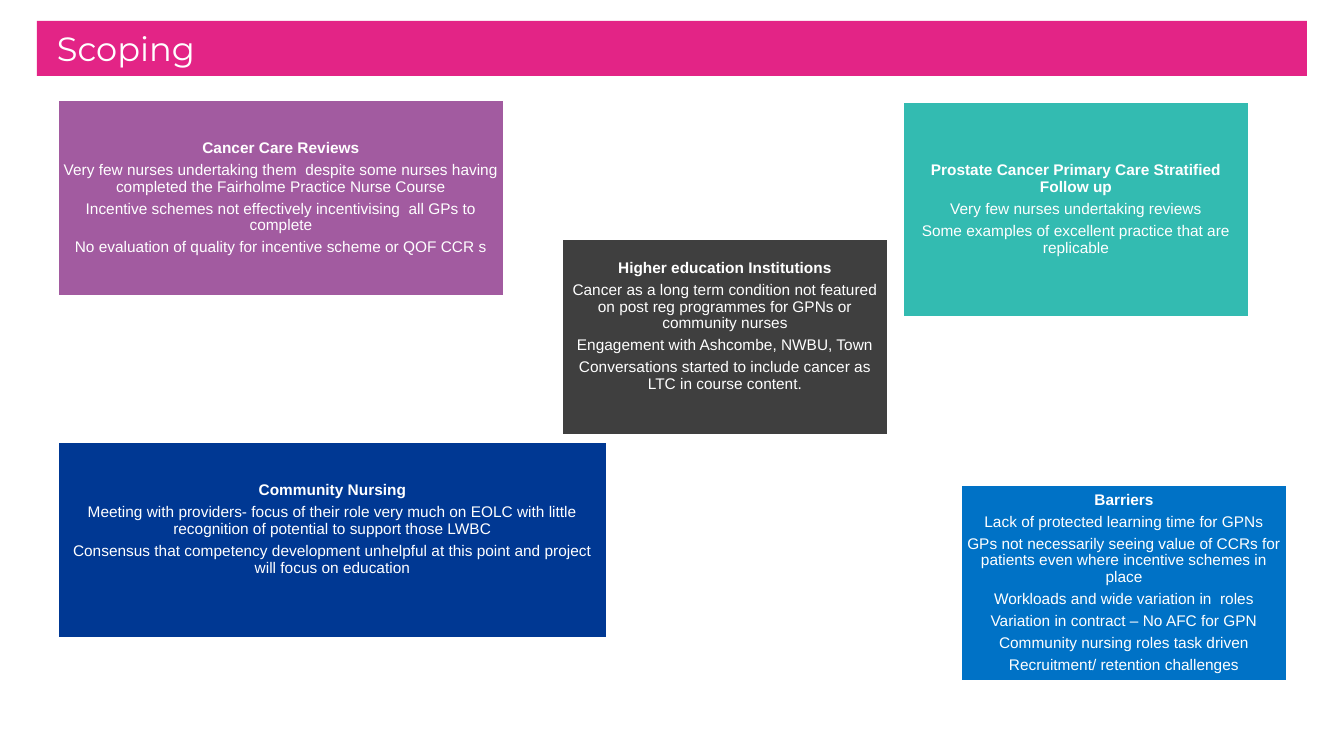
from pptx import Presentation
from pptx.dml.color import RGBColor
from pptx.enum.shapes import MSO_SHAPE as Shape
from pptx.enum.text import MSO_ANCHOR as Anchor, PP_ALIGN as Align
from pptx.util import Pt

PX = 914400 / 100.8
WIDTH, HEIGHT = 1344, 756

WHITE = RGBColor(0xFF, 0xFF, 0xFF)
PINK = RGBColor(0xE3, 0x24, 0x86)
PURPLE = RGBColor(0xA2, 0x5B, 0xA0)
TEAL = RGBColor(0x33, 0xBB, 0xB1)
NAVY = RGBColor(0x00, 0x38, 0x93)
CHARCOAL = RGBColor(0x3F, 0x3F, 0x3F)
BLUE = RGBColor(0x00, 0x72, 0xC6)

TITLE = "Scoping"
TITLE_BOX = (37, 21, 1270, 55)
INSET = 5
RAISED = 26  # bottom inset that lifts the text above the middle

# box (left, top, width, height), fill, bottom inset, heading, points
CARDS = [
    ((58, 100, 446, 196), PURPLE, INSET, "Cancer Care Reviews", [
        "Very few nurses undertaking them  despite some nurses having "
        "completed the Fairholme Practice Nurse Course",
        "Incentive schemes not effectively incentivising  all GPs to complete",
        "No evaluation of quality for incentive scheme or QOF CCR s",
    ]),
    ((903, 102, 346, 215), TEAL, INSET,
     "Prostate Cancer Primary Care Stratified Follow up", [
        "Very few nurses undertaking reviews",
        "Some examples of excellent practice that are replicable",
    ]),
    ((58, 442, 549, 196), NAVY, RAISED, "Community Nursing", [
        "Meeting with providers- focus of their role very much on EOLC with "
        "little recognition of potential to support those LWBC",
        "Consensus that competency development unhelpful at this point and "
        "project will focus on education",
    ]),
    ((562, 239, 326, 196), CHARCOAL, RAISED, "Higher education Institutions", [
        "Cancer as a long term condition not featured on post reg programmes "
        "for GPNs or community nurses",
        "Engagement with Ashcombe, NWBU, Town",
        "Conversations started to include cancer as LTC in course content.",
    ]),
    ((961, 485, 326, 196), BLUE, INSET, "Barriers", [
        "Lack of protected learning time for GPNs",
        "GPs not necessarily seeing value of CCRs for patients even where "
        "incentive schemes in place",
        "Workloads and wide variation in  roles",
        "Variation in contract – No AFC for GPN",
        "Community nursing roles task driven",
        "Recruitment/ retention challenges",
    ]),
]

CARD_FORMAT = {"alignment": Align.CENTER, "line_spacing": 0.9,
               "space_after": Pt(3.85)}
TITLE_FORMAT = {"alignment": Align.LEFT}


def px(length):
    return round(length * PX)


def set_all(target, values):
    for name, value in values.items():
        setattr(target, name, value)


def add_box(slide, box, fill, insets):
    """Add a filled rectangle; insets are left, top, right, bottom."""
    shape = slide.shapes.add_shape(Shape.RECTANGLE, *map(px, box))
    shape.shadow.inherit = False
    shape.fill.solid()
    shape.fill.fore_color.rgb = fill
    shape.line.fill.background()
    left, top, right, bottom = map(px, insets)
    set_all(shape.text_frame, {
        "word_wrap": True, "vertical_anchor": Anchor.MIDDLE,
        "margin_left": left, "margin_top": top,
        "margin_right": right, "margin_bottom": bottom})
    return shape


def write_lines(shape, lines, paragraph_format, font_format):
    """Write one paragraph per (text, bold) pair."""
    frame = shape.text_frame
    for index, (text, bold) in enumerate(lines):
        paragraph = frame.add_paragraph() if index else frame.paragraphs[0]
        set_all(paragraph, paragraph_format)
        run = paragraph.add_run()
        run.text = text
        set_all(run.font, {**font_format, "bold": bold})
        run.font.color.rgb = WHITE


def main():
    presentation = Presentation()
    set_all(presentation, {"slide_width": px(WIDTH), "slide_height": px(HEIGHT)})
    slide = presentation.slides.add_slide(presentation.slide_layouts[6])

    for box, fill, bottom, heading, points in CARDS:
        card = add_box(slide, box, fill, (INSET, INSET, INSET, bottom))
        card.line.color.rgb = WHITE
        card.line.width = Pt(2)
        lines = [(heading, True)] + [(point, False) for point in points]
        write_lines(card, lines, CARD_FORMAT, {"name": "Arial", "size": Pt(11)})

    title = add_box(slide, TITLE_BOX, PINK, (20, INSET, 10, INSET))
    write_lines(title, [(TITLE, False)], TITLE_FORMAT,
                {"name": "Montserrat", "size": Pt(24)})

    presentation.save("out.pptx")


if __name__ == "__main__":
    main()
